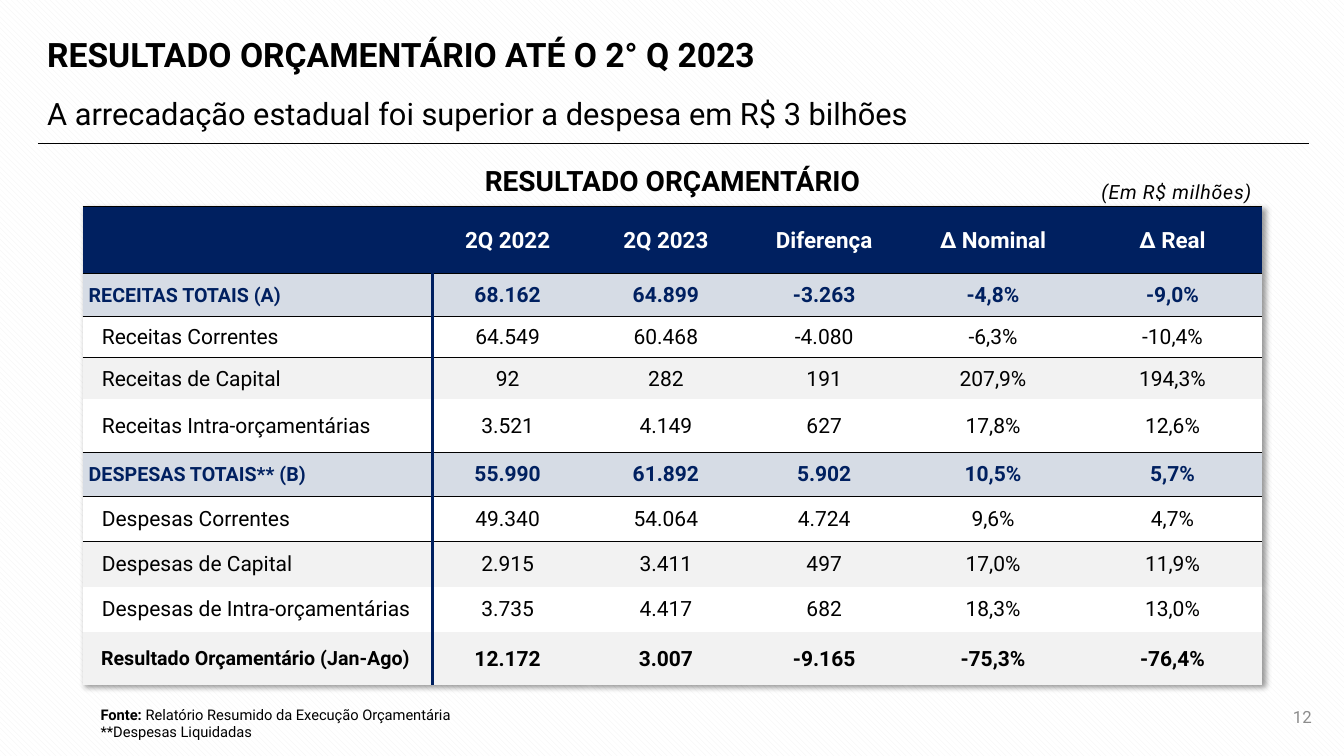
from dataclasses import dataclass
from enum import Enum

from lxml.etree import SubElement
from pptx import Presentation
from pptx.dml.color import RGBColor
from pptx.enum.dml import MSO_PATTERN
from pptx.enum.shapes import MSO_CONNECTOR
from pptx.enum.text import MSO_ANCHOR, PP_ALIGN
from pptx.oxml import parse_xml
from pptx.oxml.ns import nsdecls, qn
from pptx.slide import Slide
from pptx.table import Table, _Cell
from pptx.util import Inches, Pt

FONT = "Roboto"
BLACK, WHITE, NAVY = "000000", "FFFFFF", "002060"
PALE_BLUE, PALE_GRAY, NUMBER_GRAY = "D6DCE5", "F2F2F2", "8C8C8C"
NO_STYLE_NO_GRID = "{2D5ABB26-0587-4C30-8999-92F81FD0307C}"
TABLE_LEFT, TABLE_TOP = 0.82, 2.05
COLUMN_WIDTHS = [3.43, 1.57, 1.57, 1.57, 1.78, 1.78]


@dataclass(frozen=True)
class Label:
    """A text box; each paragraph is a list of (text, bold) runs."""
    box: tuple[float, float, float, float]
    paragraphs: list[list[tuple[str, bool]]]
    size: float
    color: str = BLACK
    align: PP_ALIGN = PP_ALIGN.LEFT
    anchor: MSO_ANCHOR = MSO_ANCHOR.TOP
    line_spacing: float = 1.0
    italic: bool = False
    character_spacing: int = 0


@dataclass(frozen=True)
class RowStyle:
    color: str
    bold: bool
    label_size: float
    value_size: float
    label_inset: float
    label_align: PP_ALIGN = PP_ALIGN.LEFT
    ruled: bool = False


class Kind(Enum):
    HEADER = RowStyle(WHITE, True, 16, 16, 0.01, ruled=True)
    TOTAL = RowStyle(NAVY, True, 14, 15, 0.06, ruled=True)
    ITEM = RowStyle(BLACK, False, 15, 15, 0.19)
    RESULT = RowStyle(BLACK, True, 14, 15, 0.01, PP_ALIGN.CENTER)


@dataclass(frozen=True)
class Row:
    kind: Kind
    height: float
    fill: str
    texts: list[str]


LABELS = [
    Label((12.15, 6.91, 0.96, 0.4), [[("12", False)]], 12, NUMBER_GRAY,
          PP_ALIGN.RIGHT, MSO_ANCHOR.MIDDLE),
    Label((0.37, 0.17, 10.2, 0.79), [[("RESULTADO ORÇAMENTÁRIO ATÉ O 2° Q 2023", True)]], 24,
          anchor=MSO_ANCHOR.MIDDLE, line_spacing=0.9),
    Label((0.37, 0.79, 12.6, 0.59),
          [[("A arrecadação estadual foi superior a despesa em R$ 3 bilhões", False)]], 22,
          anchor=MSO_ANCHOR.MIDDLE, line_spacing=1.2),
    Label((0.64, 1.57, 12.06, 0.44), [[("RESULTADO ORÇAMENTÁRIO", True)]], 20,
          align=PP_ALIGN.CENTER),
    Label((10.42, 1.69, 2.09, 0.42), [[("(Em R$ milhões)", False)]], 14,
          align=PP_ALIGN.RIGHT, line_spacing=1.2, italic=True, character_spacing=50),
    Label((0.9, 6.95, 4.74, 0.45),
          [[("Fonte: ", True), ("Relatório Resumido da Execução Orçamentária", False)],
           [("**Despesas Liquidadas", False)]], 10.5),
]

ROWS = [
    Row(Kind.HEADER, 0.66, NAVY,
        ["", "2Q 2022", "2Q 2023", "Diferença", "∆ Nominal", "∆ Real"]),
    Row(Kind.TOTAL, 0.43, PALE_BLUE,
        ["RECEITAS TOTAIS (A)", "68.162", "64.899", "-3.263", "-4,8%", "-9,0%"]),
    Row(Kind.ITEM, 0.41, WHITE,
        ["Receitas Correntes", "64.549", "60.468", "-4.080", "-6,3%", "-10,4%"]),
    Row(Kind.ITEM, 0.41, PALE_GRAY,
        ["Receitas de Capital", "92", "282", "191", "207,9%", "194,3%"]),
    Row(Kind.ITEM, 0.53, WHITE,
        ["Receitas Intra-orçamentárias", "3.521", "4.149", "627", "17,8%", "12,6%"]),
    Row(Kind.TOTAL, 0.43, PALE_BLUE,
        ["DESPESAS TOTAIS** (B)", "55.990", "61.892", "5.902", "10,5%", "5,7%"]),
    Row(Kind.ITEM, 0.45, WHITE,
        ["Despesas Correntes", "49.340", "54.064", "4.724", "9,6%", "4,7%"]),
    Row(Kind.ITEM, 0.45, PALE_GRAY,
        ["Despesas de Capital", "2.915", "3.411", "497", "17,0%", "11,9%"]),
    Row(Kind.ITEM, 0.45, WHITE,
        ["Despesas de Intra-orçamentárias", "3.735", "4.417", "682", "18,3%", "13,0%"]),
    Row(Kind.RESULT, 0.53, PALE_GRAY,
        ["Resultado Orçamentário (Jan-Ago)", "12.172", "3.007", "-9.165", "-75,3%", "-76,4%"]),
]


def rgb(color: str) -> RGBColor:
    return RGBColor.from_string(color)


def add_label(slide: Slide, label: Label) -> None:
    frame = slide.shapes.add_textbox(*map(Inches, label.box)).text_frame
    frame.word_wrap = True
    frame.vertical_anchor = label.anchor
    for index, runs in enumerate(label.paragraphs):
        paragraph = frame.add_paragraph() if index else frame.paragraphs[0]
        paragraph.alignment = label.align
        paragraph.line_spacing = label.line_spacing
        font = paragraph.font
        font.name, font.size, font.italic = FONT, Pt(label.size), label.italic
        font.color.rgb = rgb(label.color)
        for text, bold in runs:
            run = paragraph.add_run()
            run.text = text
            run.font.bold = bold
            if label.character_spacing:
                run.font._element.set("spc", str(label.character_spacing))


def add_line(slide: Slide, start: tuple[float, float], end: tuple[float, float],
             color: str, width: float) -> None:
    line = slide.shapes.add_connector(MSO_CONNECTOR.STRAIGHT, *map(Inches, start + end))
    line.line.color.rgb = rgb(color)
    line.line.width = Pt(width)
    SubElement(line._element.spPr, qn("a:effectLst"))


def add_border(cell: _Cell, edge: str) -> None:
    border = SubElement(cell._tc.get_or_add_tcPr(), qn(f"a:{edge}"), w=str(Pt(0.5)))
    fill = SubElement(border, qn("a:solidFill"))
    SubElement(fill, qn("a:srgbClr"), val=BLACK)


def fill_cell(cell: _Cell, row: Row, column: int) -> None:
    style = row.kind.value
    is_label = column == 0
    cell.fill.solid()
    cell.fill.fore_color.rgb = rgb(row.fill)
    cell.vertical_anchor = MSO_ANCHOR.MIDDLE
    cell.margin_left = Inches(style.label_inset if is_label else 0.01)
    cell.margin_top = cell.margin_right = Inches(0.01)
    cell.margin_bottom = 0
    cell.text = row.texts[column]
    paragraph = cell.text_frame.paragraphs[0]
    paragraph.alignment = style.label_align if is_label else PP_ALIGN.CENTER
    font = paragraph.font
    font.name, font.bold = FONT, style.bold
    font.size = Pt(style.label_size if is_label else style.value_size)
    font.color.rgb = rgb(style.color)


def style_table(table: Table) -> None:
    """Drop the banded style and give the table a soft shadow."""
    table.first_row = table.horz_banding = False
    properties = table._tbl.tblPr
    properties.find(qn("a:tableStyleId")).text = NO_STYLE_NO_GRID
    properties.insert(0, parse_xml(
        f'<a:effectLst {nsdecls("a")}><a:outerShdw blurRad="50800" dist="38100" dir="2700000" '
        'algn="tl" rotWithShape="0"><a:srgbClr val="000000"><a:alpha val="40000"/></a:srgbClr>'
        '</a:outerShdw></a:effectLst>'))


def add_budget_table(slide: Slide) -> None:
    height = sum(row.height for row in ROWS)
    box = (TABLE_LEFT, TABLE_TOP, sum(COLUMN_WIDTHS), height)
    table = slide.shapes.add_table(len(ROWS), len(COLUMN_WIDTHS), *map(Inches, box)).table
    style_table(table)
    for column, width in zip(table.columns, COLUMN_WIDTHS):
        column.width = Inches(width)
    ruled = [row.kind.value.ruled for row in ROWS]
    for index, row in enumerate(ROWS):
        table.rows[index].height = Inches(row.height)
        for column, cell in enumerate(table.rows[index].cells):
            if any(ruled[max(index - 1, 0):index + 1]):
                add_border(cell, "lnT")
            if any(ruled[index:index + 2]):
                add_border(cell, "lnB")
            fill_cell(cell, row, column)


def main() -> None:
    presentation = Presentation()
    presentation.slide_width, presentation.slide_height = Inches(13.33), Inches(7.5)
    slide = presentation.slides.add_slide(presentation.slide_layouts[6])
    background = slide.background.fill
    background.patterned()
    background.pattern = MSO_PATTERN.WIDE_DOWNWARD_DIAGONAL
    background.fore_color.rgb = rgb(PALE_GRAY)
    background.back_color.rgb = rgb(WHITE)
    for label in LABELS:
        add_label(slide, label)
    add_line(slide, (0.38, 1.42), (12.98, 1.42), BLACK, 0.5)
    add_budget_table(slide)
    add_line(slide, (4.29, 2.71), (4.29, 6.8), NAVY, 1.5)
    presentation.save("out.pptx")


if __name__ == "__main__":
    main()
